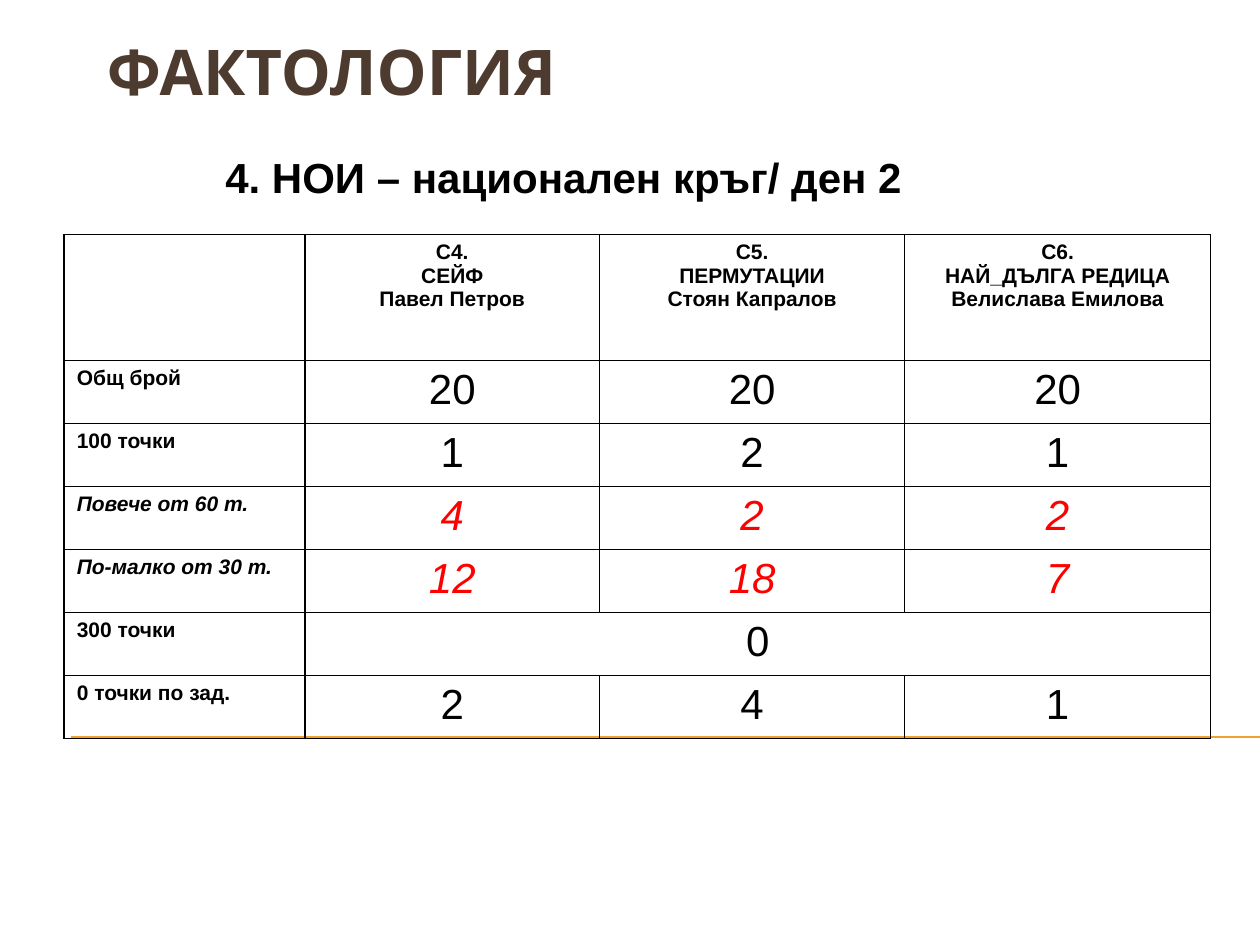
from itertools import product

from lxml.etree import SubElement
from pptx import Presentation
from pptx.dml.color import RGBColor
from pptx.enum.shapes import MSO_CONNECTOR
from pptx.enum.text import MSO_ANCHOR, PP_ALIGN
from pptx.oxml import parse_xml
from pptx.oxml.ns import nsdecls, qn
from pptx.util import Inches, Pt

TITLE = "ФАКТОЛОГИЯ"
ROUND = "4. НОИ – национален кръг/ ден 2"
HEADS = ["", "С4.\nСЕЙФ\nПавел Петров", "С5.\nПЕРМУТАЦИИ\nСтоян Капралов",
         "С6.\nНАЙ_ДЪЛГА РЕДИЦА\nВелислава Емилова"]
ROWS = [
    ("Общ брой", 20, 20, 20),
    ("100 точки", 1, 2, 1),
    ("Повече от 60 т.", 4, 2, 2),
    ("По-малко от 30 т.", 12, 18, 7),
    ("300 точки", 0),
    ("0 точки по зад.", 2, 4, 1),
]
STRESS = {3, 4}
WIDTHS = [1.91, 2.34, 2.42, 2.43]
HEIGHTS = [1] + [0.5] * len(ROWS)


class Theme:
    head = "Karla"
    body = "Arial"
    brown = "4E3B30"
    gold = "F0A22E"
    black = "000000"
    red = "FF0000"
    large = 36
    mid = 24
    small = 12


def style(frame, size, color, bold=False, slant=False, font=Theme.body, align=PP_ALIGN.LEFT):
    for para in frame.paragraphs:
        para.alignment = align
        for run in para.runs:
            face = run.font
            face.name, face.size = font, Pt(size)
            face.bold, face.italic = bold, slant
            face.color.rgb = RGBColor.from_string(color)


def add_text(slide, box, text, wrap, anchor, **look):
    frame = slide.shapes.add_textbox(*map(Inches, box)).text_frame
    frame.text = text
    frame.word_wrap = wrap
    frame.vertical_anchor = anchor
    style(frame, bold=True, **look)


def add_rule(slide):
    line = slide.shapes.add_connector(
        MSO_CONNECTOR.STRAIGHT, Inches(0.56), Inches(5.85), Inches(10), Inches(5.85))
    line.line.color.rgb = RGBColor.from_string(Theme.gold)
    line.line.width = Pt(0.75)
    SubElement(line._element.spPr, qn("a:effectLst"))


def add_edges(cell):
    props = cell._tc.get_or_add_tcPr()
    for pos, side in enumerate("LRTB"):
        props.insert(pos, parse_xml(
            f'<a:ln{side} {nsdecls("a")} w="{Pt(1)}"><a:solidFill>'
            f'<a:srgbClr val="{Theme.black}"/></a:solidFill></a:ln{side}>'))


def add_grid(slide):
    grid = slide.shapes.add_table(
        len(HEIGHTS), len(WIDTHS), Inches(0.51), Inches(1.86),
        Inches(sum(WIDTHS)), Inches(sum(HEIGHTS))).table
    for col, width in zip(grid.columns, WIDTHS):
        col.width = Inches(width)
    for row, height in zip(grid.rows, HEIGHTS):
        row.height = Inches(height)
    for r, c in product(range(len(HEIGHTS)), range(len(WIDTHS))):
        cell = grid.cell(r, c)
        cell.fill.background()
        add_edges(cell)
    for r, row in enumerate([HEADS] + ROWS):
        for c, value in enumerate(row):
            frame = grid.cell(r, c).text_frame
            frame.text = str(value)
            score = r > 0 and c > 0
            stress = r in STRESS
            style(frame, Theme.mid if score else Theme.small,
                  Theme.red if score and stress else Theme.black,
                  bold=not score, slant=stress,
                  align=PP_ALIGN.CENTER if c else PP_ALIGN.LEFT)
        if len(row) < len(WIDTHS):
            grid.cell(r, 1).merge(grid.cell(r, len(WIDTHS) - 1))


def main():
    deck = Presentation()
    deck.slide_width, deck.slide_height = Inches(10), Inches(7.5)
    slide = deck.slides.add_slide(deck.slide_layouts[6])
    add_rule(slide)
    add_text(slide, (0.75, 0.21, 8.66, 1.02), TITLE, True, MSO_ANCHOR.TOP,
             size=Theme.large, color=Theme.brown, font=Theme.head)
    add_text(slide, (1.69, 1.15, 5.71, 0.51), ROUND, False, MSO_ANCHOR.MIDDLE,
             size=Theme.mid, color=Theme.black)
    add_grid(slide)
    deck.save("out.pptx")


if __name__ == "__main__":
    main()
